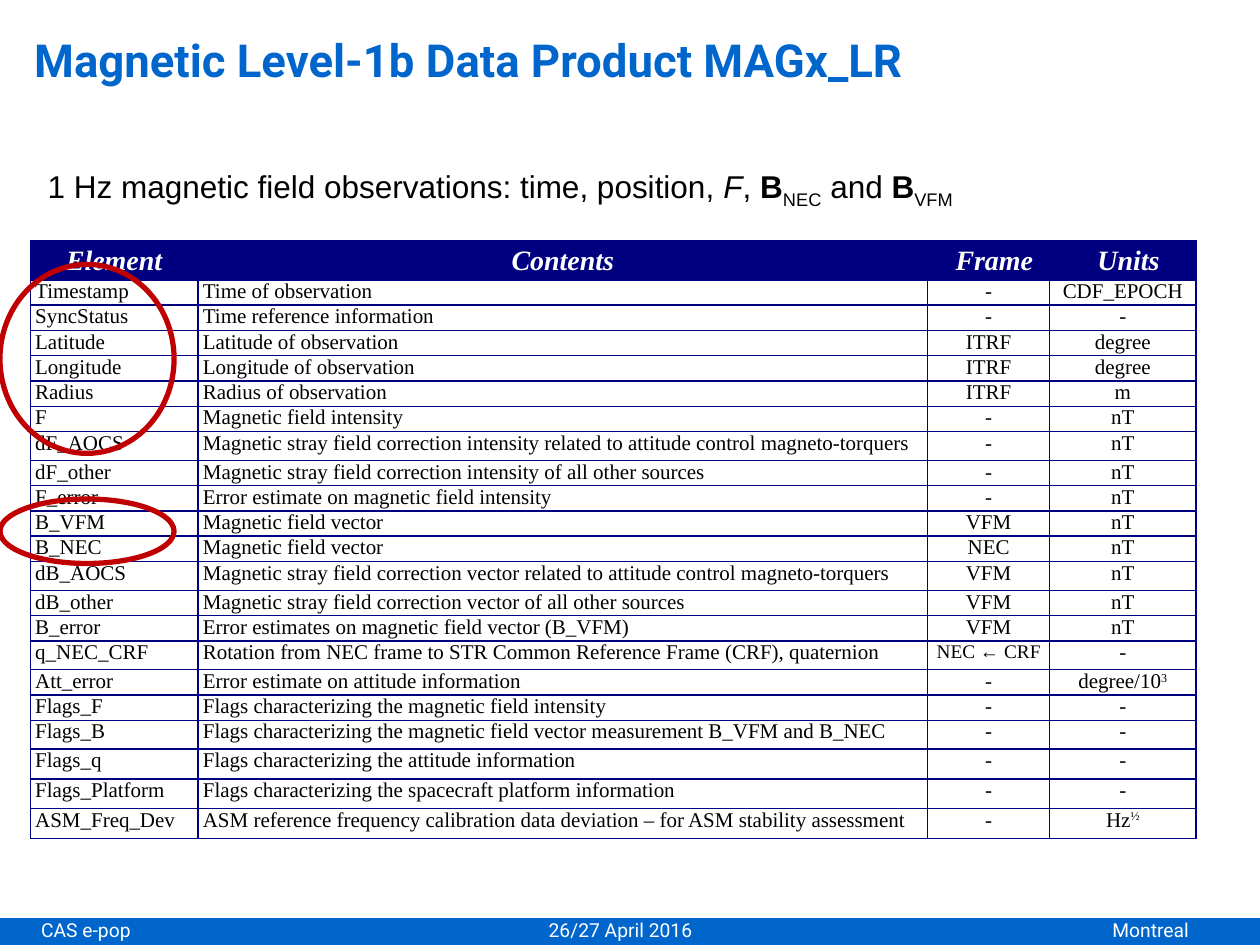
"""Build the slide on the magnetic Level-1b data product MAGx_LR."""
import dataclasses
import typing

import lxml.etree
import pptx
import pptx.dml.color
import pptx.enum.shapes
import pptx.enum.text
import pptx.oxml.ns
import pptx.util

Cm = pptx.util.Cm
Pt = pptx.util.Pt
Align = pptx.enum.text.PP_ALIGN
Anchor = pptx.enum.text.MSO_ANCHOR


@dataclasses.dataclass(frozen=True)
class Theme:
    """Colours, fonts and type sizes of the slide."""
    blue: str = "0066CC"
    navy: str = "000080"
    red: str = "C00000"
    white: str = "FFFFFF"
    black: str = "000000"
    heading_font: str = "Roboto"
    body_font: str = "Arial"
    table_font: str = "Times New Roman"
    title_size: float = 26
    lead_size: float = 18
    header_size: float = 16
    cell_size: float = 12
    small_size: float = 11


class Style(typing.NamedTuple):
    """Type style of a paragraph."""
    font: str
    size: float
    colour: str
    bold: bool = False
    italic: bool = False


class Span(typing.NamedTuple):
    """Piece of text with its own emphasis; the baseline is in percent."""
    text: str
    bold: bool | None = None
    italic: bool | None = None
    baseline: int = 0


class Box(typing.NamedTuple):
    """Left, top, width and height in centimetres."""
    left: float
    top: float
    width: float
    height: float

    def lengths(self) -> list[pptx.util.Length]:
        """Return the four measures as lengths."""
        return [Cm(value) for value in self]


class DataField(typing.NamedTuple):
    """One row of the data product table."""
    element: str
    contents: str
    frame: str
    units: str
    height: float = 0.51
    units_superscript: str = ""
    frame_size: float = 12


THEME = Theme()
TALL, TALLER, HEADER_HEIGHT = 0.58, 0.6, 0.79
COLUMN_WIDTHS = (3.38, 14.71, 2.46, 0.23, 2.72)
HEADER = ("Element", "Contents", "Frame", "Units")
HEADER_COLUMNS, FIELD_COLUMNS = (0, 1, 2, 4), (0, 1, 2, 3)
FIELDS = (
    DataField("Timestamp", "Time of observation", "-", "CDF_EPOCH"),
    DataField("SyncStatus", "Time reference information", "-", "-"),
    DataField("Latitude", "Latitude of observation", "ITRF", "degree"),
    DataField("Longitude", "Longitude of observation", "ITRF", "degree"),
    DataField("Radius", "Radius of observation", "ITRF", "m"),
    DataField("F", "Magnetic field intensity", "-", "nT"),
    DataField("dF_AOCS", "Magnetic stray field correction intensity related to attitude control magneto-torquers",
              "-", "nT", TALL),
    DataField("dF_other", "Magnetic stray field correction intensity of all other sources", "-", "nT"),
    DataField("F_error", "Error estimate on magnetic field intensity", "-", "nT"),
    DataField("B_VFM", "Magnetic field vector", "VFM", "nT"),
    DataField("B_NEC", "Magnetic field vector", "NEC", "nT"),
    DataField("dB_AOCS", "Magnetic stray field correction vector related to attitude control magneto-torquers",
              "VFM", "nT", TALL),
    DataField("dB_other", "Magnetic stray field correction vector of all other sources", "VFM", "nT"),
    DataField("B_error", "Error estimates on magnetic field vector (B_VFM)", "VFM", "nT"),
    DataField("q_NEC_CRF", "Rotation from NEC frame to STR Common Reference Frame (CRF), quaternion",
              "NEC ← CRF", "-", TALL, frame_size=THEME.small_size),
    DataField("Att_error", "Error estimate on attitude information", "-", "degree/10", units_superscript="3"),
    DataField("Flags_F", "Flags characterizing the magnetic field intensity", "-", "-"),
    DataField("Flags_B", "Flags characterizing the magnetic field vector measurement B_VFM and B_NEC",
              "-", "-", TALL),
    DataField("Flags_q", "Flags characterizing the attitude information", "-", "-", TALLER),
    DataField("Flags_Platform", "Flags characterizing the spacecraft platform information", "-", "-", TALLER),
    DataField("ASM_Freq_Dev", "ASM reference frequency calibration data deviation – for ASM stability assessment",
              "-", "Hz", TALLER, units_superscript="½"),
)
LEAD = (
    Span("1 Hz magnetic field observations: time, position, "), Span("F", italic=True), Span(", "),
    Span("B", bold=True), Span("NEC", baseline=-25), Span(" and "),
    Span("B", bold=True), Span("VFM", baseline=-25),
)
MARKS = (Box(0, 5.33, 3.51, 3.81), Box(0, 10.06, 3.51, 1.3))


def rgb(colour: str) -> pptx.dml.color.RGBColor:
    """Turn a hexadecimal string into a colour."""
    return pptx.dml.color.RGBColor.from_string(colour)


def write(paragraph, spans: typing.Iterable[Span], style: Style, alignment=Align.LEFT) -> None:
    """Fill a paragraph with spans in one style."""
    paragraph.alignment = alignment
    font = paragraph.font
    font.name, font.size, font.bold, font.italic = style.font, Pt(style.size), style.bold, style.italic
    font.color.rgb = rgb(style.colour)
    for span in spans:
        run = paragraph.add_run()
        run.text = span.text
        run.font.bold, run.font.italic = span.bold, span.italic
        if span.baseline:
            run._r.get_or_add_rPr().set("baseline", str(span.baseline * 1000))


def add_text(slide, box: Box, inset: float, anchor=Anchor.TOP):
    """Add a wrapping text box and return its first paragraph."""
    frame = slide.shapes.add_textbox(*box.lengths()).text_frame
    frame.word_wrap = True
    frame.margin_left = frame.margin_right = Cm(inset)
    frame.vertical_anchor = anchor
    return frame.paragraphs[0]


def add_outline(slide, kind, box: Box, colour: str, width: float, fill: str | None = None) -> None:
    """Add a preset shape with a line and an optional fill."""
    shape = slide.shapes.add_shape(kind, *box.lengths())
    shape.shadow.inherit = False
    shape.line.color.rgb, shape.line.width = rgb(colour), Pt(width)
    if fill:
        shape.fill.solid()
        shape.fill.fore_color.rgb = rgb(fill)
    else:
        shape.fill.background()


def add_tabs(paragraph, tabs: dict[str, float]) -> None:
    """Add tab stops, given as alignment and position in centimetres."""
    tab_list = lxml.etree.SubElement(paragraph._p.get_or_add_pPr(), pptx.oxml.ns.qn("a:tabLst"))
    for alignment, position in tabs.items():
        lxml.etree.SubElement(tab_list, pptx.oxml.ns.qn("a:tab"), pos=str(Cm(position)), algn=alignment)


def format_cell(cell, fill: str | None) -> None:
    """Set margins, borders and fill of a cell."""
    cell.margin_left = cell.margin_right = Cm(0.1)
    cell.margin_top = cell.margin_bottom = 0
    properties = cell._tc.get_or_add_tcPr()
    for side in ("a:lnL", "a:lnR", "a:lnT", "a:lnB"):
        line = lxml.etree.SubElement(properties, pptx.oxml.ns.qn(side), w=str(Pt(1)))
        solid = lxml.etree.SubElement(line, pptx.oxml.ns.qn("a:solidFill"))
        lxml.etree.SubElement(solid, pptx.oxml.ns.qn("a:srgbClr"), val=THEME.navy)
    if fill:
        cell.fill.solid()
        cell.fill.fore_color.rgb = rgb(fill)
    else:
        cell.fill.background()


def add_field_table(slide, box: Box) -> None:
    """Add the table of data fields."""
    table = slide.shapes.add_table(len(FIELDS) + 1, len(COLUMN_WIDTHS), *box.lengths()).table
    table.first_row = table.horz_banding = False
    for column, width in zip(table.columns, COLUMN_WIDTHS):
        column.width = Cm(width)
    for row, height in zip(table.rows, (HEADER_HEIGHT, *(field.height for field in FIELDS))):
        row.height = Cm(height)
        for cell in row.cells:
            format_cell(cell, THEME.navy if row is None or height == HEADER_HEIGHT else None)
    table.cell(0, 2).merge(table.cell(0, 3))
    header_style = Style(THEME.table_font, THEME.header_size, THEME.white, True, True)
    for column, heading in zip(HEADER_COLUMNS, HEADER):
        paragraph = table.cell(0, column).text_frame.paragraphs[0]
        paragraph.line_spacing, paragraph.space_after = 1.15, Pt(10)
        write(paragraph, [Span(heading)], header_style, Align.CENTER)
    cell_style = Style(THEME.table_font, THEME.cell_size, THEME.black)
    for index, field in enumerate(FIELDS, start=1):
        table.cell(index, 3).merge(table.cell(index, 4))
        units = [Span(field.units)]
        if field.units_superscript:
            units.append(Span(field.units_superscript, baseline=30))
        contents = ([Span(field.element)], [Span(field.contents)], [Span(field.frame)], units)
        for column, spans in zip(FIELD_COLUMNS, contents):
            style = cell_style._replace(size=field.frame_size) if column == 2 else cell_style
            write(table.cell(index, column).text_frame.paragraphs[0], spans, style,
                  Align.CENTER if column >= 2 else Align.LEFT)


def main() -> None:
    """Build and save the slide."""
    presentation = pptx.Presentation()
    presentation.slide_width, presentation.slide_height = Cm(25.4), Cm(19.05)
    slide = presentation.slides.add_slide(presentation.slide_layouts[6])
    shapes = pptx.enum.shapes.MSO_SHAPE
    add_outline(slide, shapes.RECTANGLE, Box(0, 18.52, 25.4, 0.53), THEME.blue, 0.75, THEME.blue)
    footer = add_text(slide, Box(0.58, 18.39, 24.82, 0.76), 0.25)
    add_tabs(footer, {"ctr": 11.68, "r": 23.14})
    write(footer, [Span("CAS e-pop\t26/27 April 2016\tMontreal")],
          Style(THEME.heading_font, THEME.small_size, THEME.white), Align.JUSTIFY)
    write(add_text(slide, Box(0.69, 0.53, 24, 1.93), 0), [Span("Magnetic Level-1b Data Product MAGx_LR")],
          Style(THEME.heading_font, THEME.title_size, THEME.blue, True))
    write(add_text(slide, Box(0.71, 3.3, 20.07, 1.02), 0.25, Anchor.MIDDLE), LEAD,
          Style(THEME.body_font, THEME.lead_size, THEME.black))
    add_field_table(slide, Box(0.61, 4.85, 23.5, 11.99))
    for mark in MARKS:
        add_outline(slide, shapes.OVAL, mark, THEME.red, 3)
    presentation.save("out.pptx")


if __name__ == "__main__":
    main()
